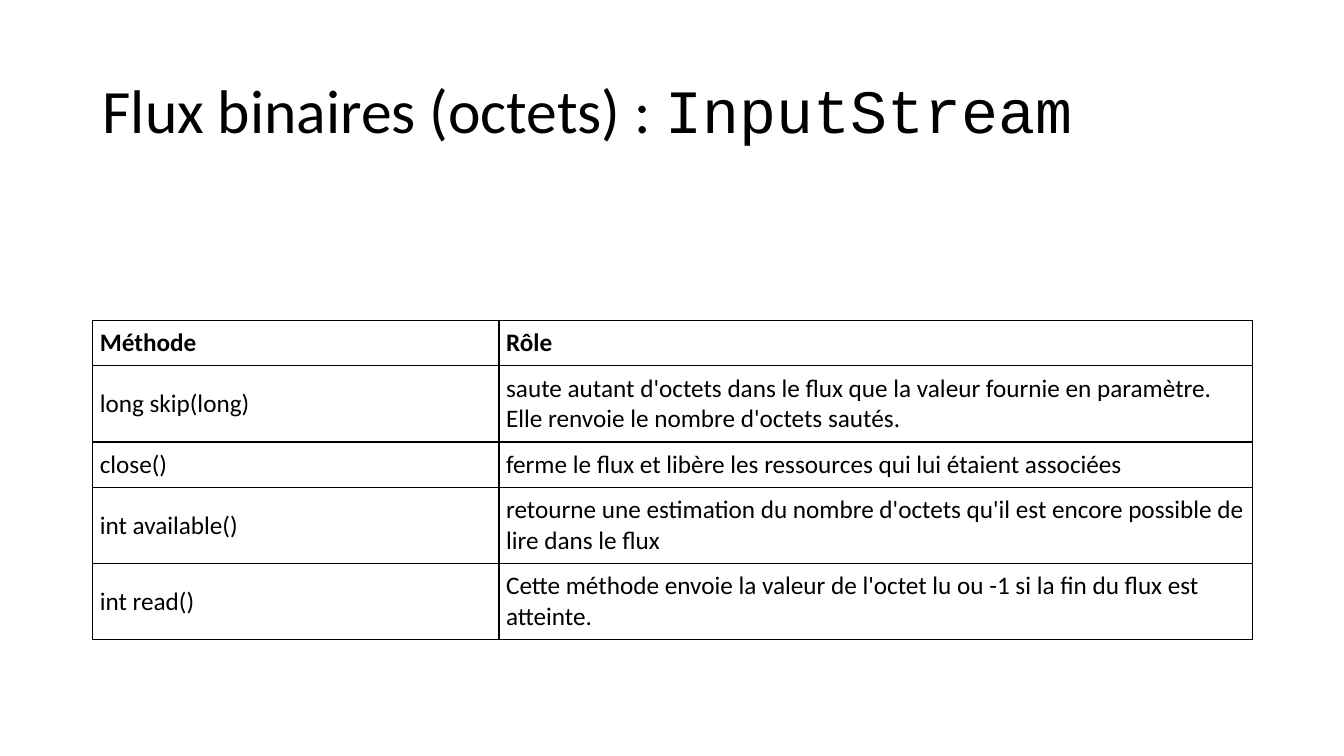
from lxml import etree
from pptx import Presentation
from pptx.dml.color import RGBColor
from pptx.enum import text
from pptx.oxml import ns
from pptx.util import Inches, Pt


def style(font, size, color, name="Calibri", bold=False):
    font.size, font.name, font.bold = Pt(size), name, bold
    font.color.rgb = RGBColor.from_string(color)


def border(cell, color, width):
    properties = cell._tc.get_or_add_tcPr()
    for position, side in enumerate(("lnL", "lnR", "lnT", "lnB")):
        line = etree.Element(ns.qn(f"a:{side}"), w=str(Pt(width)))
        fill = etree.SubElement(line, ns.qn("a:solidFill"))
        etree.SubElement(fill, ns.qn("a:srgbClr"), val=color)
        properties.insert(position, line)


BLACK = "000000"
METHODS = [
    ("Méthode", "Rôle", 0.45),
    ("long skip(long)", "saute autant d'octets dans le flux que la valeur fournie en paramètre. "
     "Elle renvoie le nombre d'octets sautés.", 0.755),
    ("close()", "ferme le flux et libère les ressources qui lui étaient associées", 0.45),
    ("int available()", "retourne une estimation du nombre d'octets qu'il est encore possible de "
     "lire dans le flux", 0.755),
    ("int read()", "Cette méthode envoie la valeur de l'octet lu ou -1 si la fin du flux est "
     "atteinte.", 0.755),
]

prs = Presentation()
prs.slide_width, prs.slide_height = Inches(13.33), Inches(7.5)
slide = prs.slides.add_slide(prs.slide_layouts[6])

title = slide.shapes.add_textbox(Inches(0.92), Inches(0.4), Inches(11.5), Inches(1.45)).text_frame
title.word_wrap = True
title.vertical_anchor = text.MSO_ANCHOR.MIDDLE
heading = title.paragraphs[0]
heading.line_spacing = 0.9
for words, typeface in (("Flux binaires (octets) : ", "Calibri"), ("InputStream", "Courier New")):
    run = heading.add_run()
    run.text = words
    style(run.font, 44, BLACK, typeface)

methods = slide.shapes.add_table(
    len(METHODS), 2, Inches(0.92), Inches(3.18), Inches(11.5), Inches(3.13)).table
methods.horz_banding = False
methods.columns[0].width, methods.columns[1].width = Inches(4.03), Inches(7.47)
for row, (method, role, height) in enumerate(METHODS):
    methods.rows[row].height = Inches(height)
    for column, words in enumerate((method, role)):
        cell = methods.cell(row, column)
        cell.text = words
        cell.vertical_anchor = text.MSO_ANCHOR.MIDDLE
        cell.margin_left = cell.margin_right = Inches(0.07)
        cell.margin_top = cell.margin_bottom = Inches(0.07)
        cell.fill.background()
        border(cell, BLACK, 1)
        style(cell.text_frame.paragraphs[0].font, 18, BLACK, bold=row == 0)
methods.cell(len(METHODS) - 1, 1).vertical_anchor = text.MSO_ANCHOR.BOTTOM

prs.save("out.pptx")
